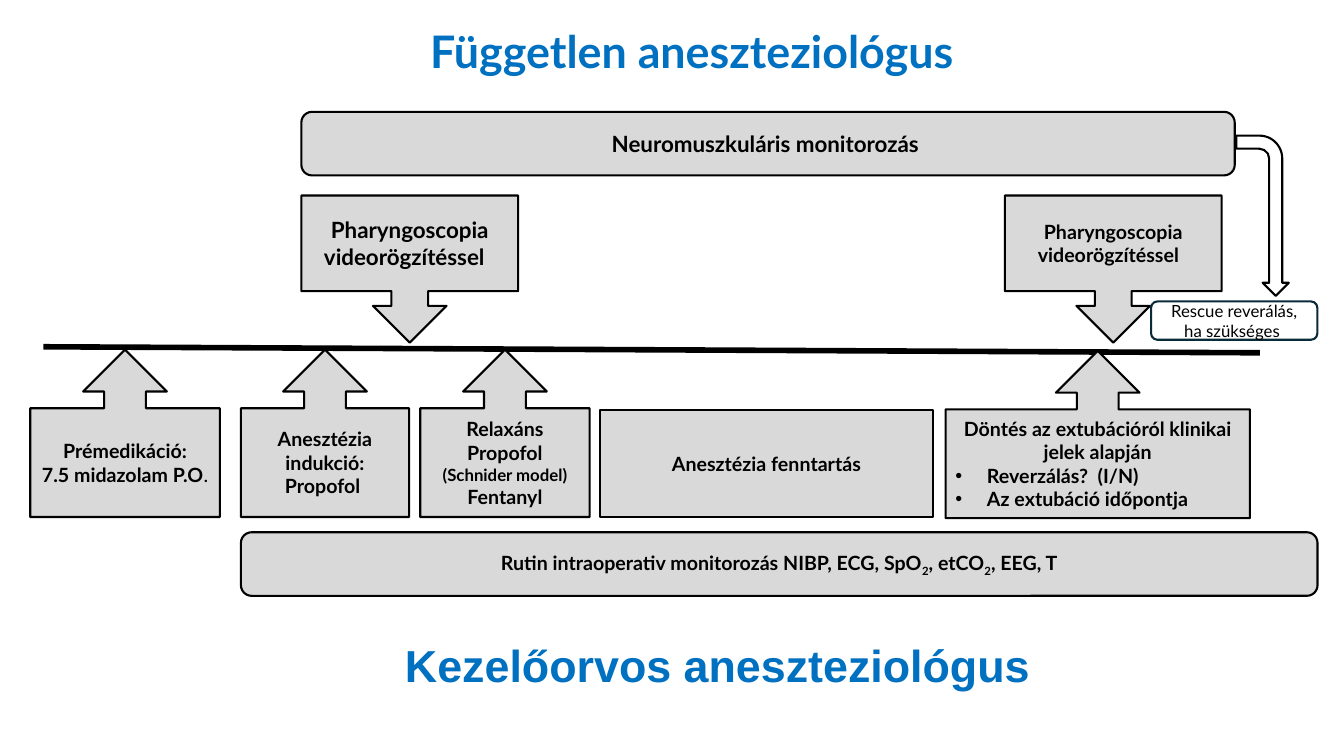
import pptx
import pptx.dml.color
import pptx.enum.shapes
import pptx.enum.text
import pptx.util
from lxml import etree

Pt = pptx.util.Pt
SHAPES = pptx.enum.shapes.MSO_SHAPE
ALIGN = pptx.enum.text.PP_ALIGN
DRAWING_NS = "{http://schemas.openxmlformats.org/drawingml/2006/main}"

COLORS = {
    "black": "000000",
    "box": "D9D9D9",
    "white": "FFFFFF",
    "rescue": "092A39",
    "heading": "0070C0",
}
CALLOUT_HEIGHT = 119.5


def rgb(name):
    return pptx.dml.color.RGBColor.from_string(COLORS[name])


def add_run(paragraph, text, size, bold=True, color="black", font="Lato", subscript=False):
    run = paragraph.add_run()
    run.text = text
    run.font.name = font
    run.font.size = Pt(size)
    run.font.bold = bold
    run.font.color.rgb = rgb(color)
    if subscript:
        run.font._element.set("baseline", "-25000")


def add_bullet(paragraph):
    properties = paragraph._p.get_or_add_pPr()
    properties.set("marL", str(Pt(22.5)))
    properties.set("indent", str(-Pt(22.5)))
    etree.SubElement(properties, DRAWING_NS + "buFont", typeface="Arial")
    etree.SubElement(properties, DRAWING_NS + "buChar", char="•")


def add_box(slide, kind, left, top, width, height, lines=(), size=14,
            bold=True, fill="box", outline="black", bullets_from=None):
    """Each line is a list of runs: (text, changes to the run's format)."""
    box = slide.shapes.add_shape(kind, Pt(left), Pt(top), Pt(width), Pt(height))
    box.shadow.inherit = False
    box.fill.solid()
    box.fill.fore_color.rgb = rgb(fill)
    box.line.color.rgb = rgb(outline)
    box.line.width = Pt(1.5)
    frame = box.text_frame
    frame.word_wrap = True
    frame.vertical_anchor = pptx.enum.text.MSO_ANCHOR.MIDDLE
    for index, runs in enumerate(lines):
        paragraph = frame.add_paragraph() if index else frame.paragraphs[0]
        bulleted = bullets_from is not None and index >= bullets_from
        paragraph.alignment = ALIGN.LEFT if bulleted else ALIGN.CENTER
        if bulleted:
            add_bullet(paragraph)
        for text, changes in runs:
            add_run(paragraph, text, **{"size": size, "bold": bold, **changes})
    return box


def add_heading(slide, text, left, top, width, font):
    heading = slide.shapes.add_textbox(Pt(left), Pt(top), Pt(width), Pt(46))
    frame = heading.text_frame
    frame.word_wrap = False
    frame.auto_size = pptx.enum.text.MSO_AUTO_SIZE.SHAPE_TO_FIT_TEXT
    add_run(frame.paragraphs[0], text, 32, color="heading", font=font)


def add_timeline(slide):
    timeline = slide.shapes.add_connector(
        pptx.enum.shapes.MSO_CONNECTOR.STRAIGHT, Pt(31), Pt(247.7), Pt(900), Pt(252))
    timeline.line.color.rgb = rgb("black")
    timeline.line.width = Pt(4)
    etree.SubElement(timeline._element.spPr, DRAWING_NS + "effectLst")


def plain(*texts):
    return [[(text, {})] for text in texts]


def main():
    deck = pptx.Presentation()
    deck.slide_width, deck.slide_height = Pt(960), Pt(540)
    slide = deck.slides.add_slide(deck.slide_layouts[6])

    add_timeline(slide)

    # Steps of the treating anaesthetist, below the timeline
    premedication = plain("Prémedikáció:") + [[("7.5 midazolam P.O", {}), (".", {"bold": False})]]
    induction = plain("Anesztézia indukció:", "Propofol ")
    relaxant = (plain("Relaxáns", "Propofol") + [[("(Schnider model)", {"size": 12})]]
                + plain("Fentanyl"))
    extubation = plain("Döntés az extubációról klinikai jelek alapján",
                       "Reverzálás?  (I/N)", "Az extubáció időpontja")
    for left, top, width, lines, bullets_from in (
        (21.6, 249.8, 135.4, premedication, None),
        (172.1, 249.8, 120.2, induction, None),
        (300.2, 249.8, 121, relaxant, None),
        (675.4, 250.6, 217.4, extubation, 1),
    ):
        add_box(slide, SHAPES.UP_ARROW_CALLOUT, left, top, width, CALLOUT_HEIGHT,
                lines, bullets_from=bullets_from)
    add_box(slide, SHAPES.RECTANGLE, 428.4, 293, 238.3, 76.3, plain("Anesztézia fenntartás"))

    # Pharyngoscopies, above the timeline
    for left, size in ((215.3, 16), (717.8, 14)):
        add_box(slide, SHAPES.DOWN_ARROW_CALLOUT, left, 139.7, 154.8, 105.1,
                plain("Pharyngoscopia videorögzítéssel  "), size)

    # Monitoring bars
    add_box(slide, SHAPES.ROUNDED_RECTANGLE, 215.3, 79.9, 666.7, 45.4,
            plain("Neuromuszkuláris monitorozás "), 16)
    subscript = {"subscript": True}
    routine = [[("Rutin intraoperativ monitorozás NIBP, ECG, SpO", {}), ("2", subscript),
                (", etCO", {}), ("2", subscript), (", EEG, T", {})]]
    add_box(slide, SHAPES.ROUNDED_RECTANGLE, 172.1, 380.2, 769, 45.4, routine)

    # Headings
    add_heading(slide, "Kezelőorvos aneszteziológus", 282.2, 452.2, 464.4, "Arial")
    add_heading(slide, "Független aneszteziológus", 300.2, 13.7, 402.5, "Lato")

    # Rescue reversal and the arrow leading to it
    add_box(slide, SHAPES.ROUNDED_RECTANGLE, 822.2, 215.3, 118.8, 27.4,
            plain("Rescue reverálás, ha szükséges "), 12, bold=False,
            fill="white", outline="rescue")
    rescue_arrow = add_box(slide, SHAPES.BENT_ARROW, 844.6, 135.4, 114.5, 37.4, fill="white")
    rescue_arrow.rotation = 90

    deck.save("out.pptx")


if __name__ == "__main__":
    main()
